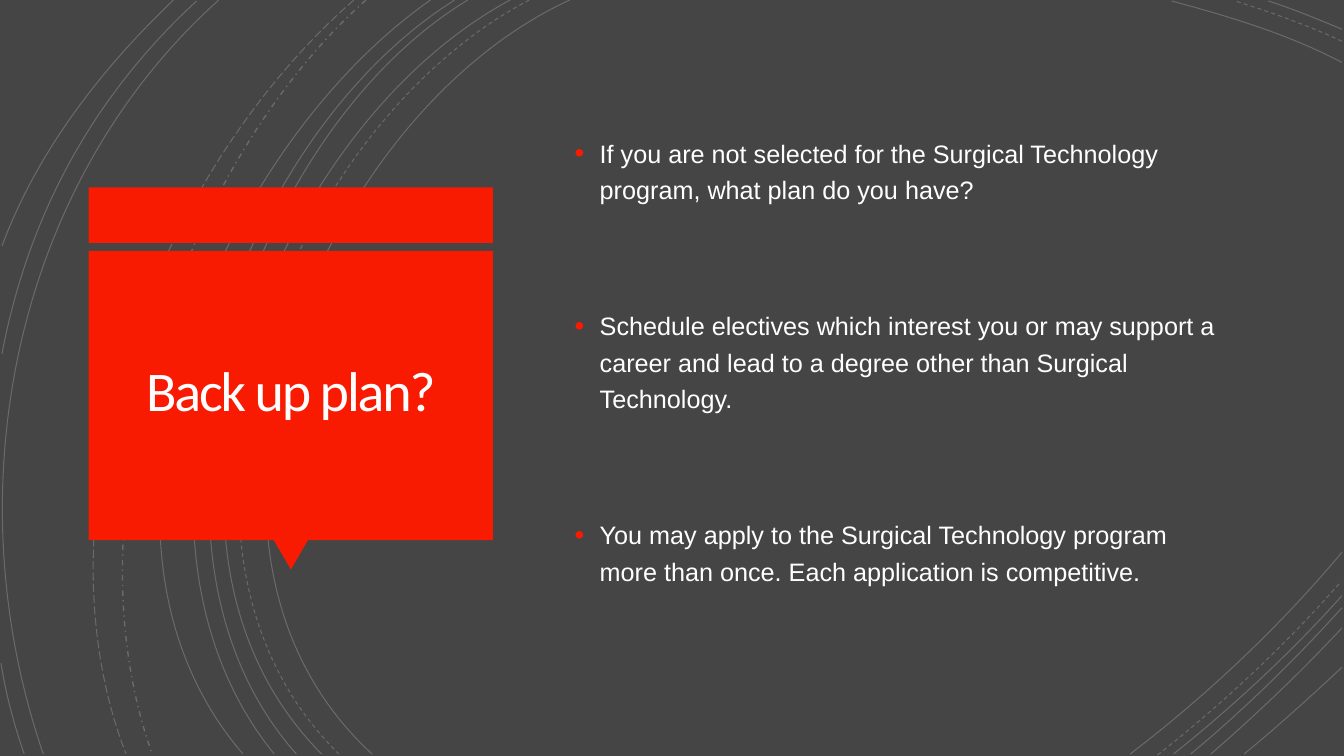
from lxml.etree import SubElement
from pptx import Presentation
from pptx.dml.color import RGBColor
from pptx.enum.dml import MSO_LINE
from pptx.enum.shapes import MSO_SHAPE
from pptx.enum.text import MSO_ANCHOR, PP_ALIGN
from pptx.oxml.ns import qn
from pptx.util import Inches, Pt

RED, GREY, WHITE = "F81B02", "454545", "FFFFFF"
SOLID, DASH = MSO_LINE.SOLID, MSO_LINE.DASH
ARCS = [
    (SOLID, (5.65, 0, 3.15, 1.15, 1.43, 5.4, 3.69, 7.48)),
    (SOLID, (13.31, 0.62, 12.78, 0.34, 12.18, 0.16, 11.62, 0.01)),
    (SOLID, (11.21, 7.48, 11.97, 6.9, 12.69, 6.22, 13.31, 5.48)),
    (DASH, (5.25, 0, 2.85, 1.25, 1.23, 5.37, 3.36, 7.48)),
    (DASH, (13.31, 0.41, 12.97, 0.25, 12.6, 0.12, 12.25, 0.01)),
    (DASH, (11.48, 7.49, 12.13, 6.98, 12.75, 6.4, 13.3, 5.77)),
    (SOLID, (5.06, 0, 2.7, 1.27, 1.1, 5.37, 3.19, 7.48)),
    (SOLID, (13.31, 0.29, 13.07, 0.19, 12.83, 0.09, 12.58, 0.01)),
    (SOLID, (11.64, 7.48, 12.23, 7.01, 12.8, 6.48, 13.31, 5.91)),
    (SOLID, (4.64, 0, 2.44, 1.33, 1.1, 5.41, 2.94, 7.48)),
    (SOLID, (11.81, 7.48, 12.34, 7.04, 12.84, 6.55, 13.31, 6.03)),
    (SOLID, (4.51, 0, 2.31, 1.38, 0.97, 5.33, 2.72, 7.48)),
    (SOLID, (12.01, 7.48, 12.46, 7.09, 12.9, 6.67, 13.31, 6.23)),
    (SOLID, (4.27, 0, 2.17, 1.47, 0.53, 5.29, 2.41, 7.48)),
    (SOLID, (12.34, 7.48, 12.67, 7.21, 12.99, 6.92, 13.31, 6.62)),
    (MSO_LINE.DASH_DOT, (3.63, 0, 1.76, 1.66, 0.65, 5.09, 1.51, 7.48)),
    (MSO_LINE.LONG_DASH, (3.51, 0, 1.57, 1.69, 0.29, 4.99, 1.25, 7.48)),
    (SOLID, (2.17, 0, 0.11, 1.85, -0.46, 4.9, 0.43, 7.48)),
    (SOLID, (1.95, 0.01, 0.92, 0.96, 0.28, 2.14, 0.02, 3.51)),
    (SOLID, (0.01, 6.58, 0.06, 6.89, 0.14, 7.19, 0.24, 7.48)),
    (SOLID, (1.72, 0, 1, 0.69, 0.37, 1.5, 0.02, 2.44)),
]
POINTS = [
    ["If you are not selected for the Surgical Technology",
     "program, what plan do you have?"],
    ["Schedule electives which interest you or may support a career "
     "and lead to a degree other than Surgical Technology."],
    ["You may apply to the Surgical Technology program",
     "more than once. Each application is competitive."],
]


def paint(color, tone):
    """Set a colour from a hex string."""
    color.rgb = RGBColor.from_string(tone)


def bend(arc):
    """Turn the three straight segments of an outline into one cubic curve."""
    legs = list(arc._element.iter(qn("a:lnTo")))
    cubic = SubElement(legs[0].getparent(), qn("a:cubicBezTo"))
    for leg in legs:
        cubic.append(leg[0])
        leg.getparent().remove(leg)


def draw_arcs(slide, left, top):
    """Draw the faint arcs from the given corner."""
    for dash, nodes in ARCS:
        spots = [(Inches(left + x), Inches(top + y))
                 for x, y in zip(nodes[::2], nodes[1::2])]
        pen = slide.shapes.build_freeform(*spots[0])
        pen.add_line_segments(spots[1:], close=False)
        arc = pen.convert_to_shape()
        bend(arc)
        arc.shadow.inherit = False
        arc.fill.background()
        arc.line.width = Pt(1 if dash == MSO_LINE.DASH_DOT else 0.75)
        arc.line.fill.solid()
        paint(arc.line.color, WHITE)
        arc.line.dash_style = dash
        tone = arc.line._ln.find(".//" + qn("a:srgbClr"))
        SubElement(tone, qn("a:alpha"), val="20000")


def add_block(slide, kind, tone, left, top, width, height):
    """Add a plain filled shape."""
    block = slide.shapes.add_shape(
        kind, Inches(left), Inches(top), Inches(width), Inches(height))
    block.shadow.inherit = False
    block.fill.solid()
    paint(block.fill.fore_color, tone)
    block.line.fill.background()
    return block


def add_text(slide, left, top, width, height):
    """Add a wrapping text box and return its frame."""
    frame = slide.shapes.add_textbox(
        Inches(left), Inches(top), Inches(width), Inches(height)).text_frame
    frame.word_wrap = True
    return frame


def add_run(para, text, face, size, tone):
    """Add one styled run."""
    run = para.add_run()
    run.text = text
    run.font.name = face
    run.font.size = Pt(size)
    paint(run.font.color, tone)
    return run


def draw_card(slide, left, top, width, height):
    """Draw the red title card with its bar and pointer."""
    bar, gap, tip, wide = 0.55, 0.08, 0.3, 0.35
    main = top + bar + gap
    deep = height - bar - gap - tip
    add_block(slide, MSO_SHAPE.RECTANGLE, RED, left, top, width, bar)
    add_block(slide, MSO_SHAPE.ISOSCELES_TRIANGLE, RED,
              left + (width - wide) / 2, main + deep - 0.01,
              wide, tip).rotation = 180
    add_block(slide, MSO_SHAPE.RECTANGLE, RED, left, main, width, deep)
    frame = add_text(slide, left + 0.09, main + 0.08, width - 0.18, deep - 0.18)
    frame.vertical_anchor = MSO_ANCHOR.MIDDLE
    frame.margin_left = frame.margin_right = Inches(0.25)
    frame.margin_top = frame.margin_bottom = Inches(0.25)
    para = frame.paragraphs[0]
    para.alignment = PP_ALIGN.CENTER
    para.line_spacing = 0.85
    run = add_run(para, "Back up plan?", "Calibri", 40, "FFFEFF")
    run.font._element.set("spc", "-150")


def add_bullet(para):
    """Give a paragraph a red hanging bullet."""
    props = para._p.get_or_add_pPr()
    props.set("marL", str(Inches(0.25)))
    props.set("indent", str(-Inches(0.25)))
    SubElement(SubElement(props, qn("a:buClr")), qn("a:srgbClr"), val=RED)
    SubElement(props, qn("a:buSzPct"), val="110000")
    SubElement(props, qn("a:buFont"), typeface="Arial")
    SubElement(props, qn("a:buChar"), char="•")


def draw_points(slide, left, top, width, height):
    """Write the bulleted points."""
    frame = add_text(slide, left, top, width, height)
    frame.vertical_anchor = MSO_ANCHOR.TOP
    frame.margin_top = Inches(0.43)
    for i, lines in enumerate(POINTS):
        para = frame.add_paragraph() if i else frame.paragraphs[0]
        add_bullet(para)
        para.line_spacing = 1.2
        if i:
            para.space_before = Pt(71.5)
        for j, line in enumerate(lines):
            if j:
                para.add_line_break()
            add_run(para, line, "Arial", 18, WHITE)


def main():
    """Build and save the slide."""
    deck = Presentation()
    deck.slide_width, deck.slide_height = Inches(13.33), Inches(7.5)
    slide = deck.slides.add_slide(deck.slide_layouts[6])
    slide.background.fill.solid()
    paint(slide.background.fill.fore_color, GREY)
    add_block(slide, MSO_SHAPE.RECTANGLE, GREY, 0, 0, 13.33, 7.48)
    draw_arcs(slide, 0, 0)
    draw_card(slide, 0.88, 1.86, 4.01, 3.8)
    draw_points(slide, 5.6, 0.88, 6.87, 5.74)
    deck.save("out.pptx")


if __name__ == "__main__":
    main()
